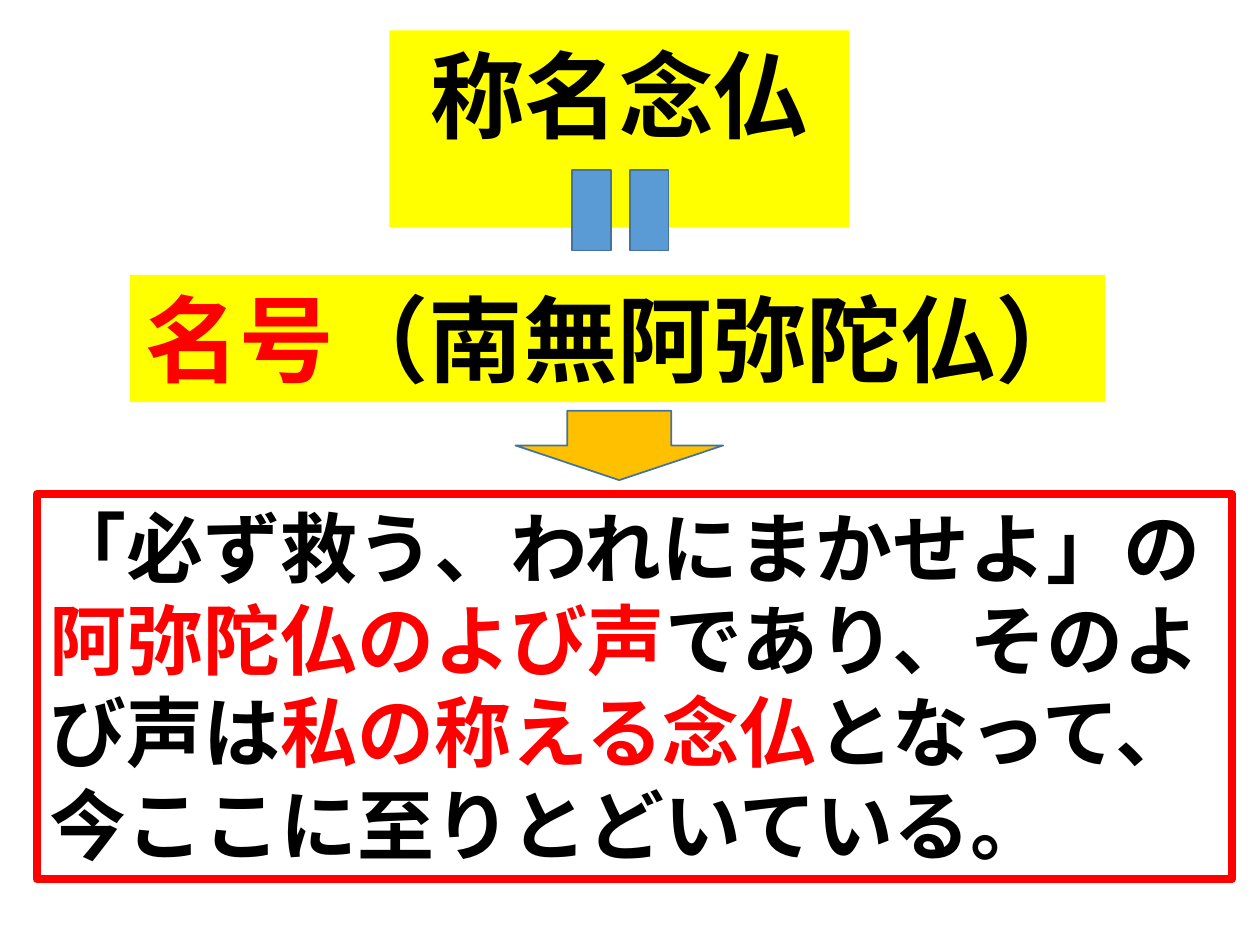
from pptx import Presentation
from pptx.dml.color import RGBColor
from pptx.enum import shapes, text
from pptx.util import Cm, Pt

BLACK, RED, YELLOW = "000000", "FF0000", "FFFF00"
ORANGE, BLUE, OUTLINE = "FFC000", "5B9BD5", "43739E"

# Boxes are left, top, width, height in centimetres; runs are (words, colour).
PRACTICE = {"box": (7.85, 0.61, 9.27, 2.57), "runs": [("称名念仏", BLACK)]}
NAME = {
    "box": (2.62, 5.54, 19.66, 2.57),
    "runs": [("名号", RED), ("（南無阿弥陀仏）", BLACK)],
}
MEANING = {
    "box": (0.74, 9.96, 24.1, 7.77),
    "runs": [
        ("「必ず救う、われにまかせよ」の", BLACK),
        ("阿弥陀仏のよび声", RED),
        ("であり、そのよび声は", BLACK),
        ("私の称える念仏", RED),
        ("となって、今ここに至りとどいている。", BLACK),
    ],
}
SYMBOLS = [
    (shapes.MSO_SHAPE.DOWN_ARROW, (10.39, 8.28, 4.19, 1.4), ORANGE, 0),
    (shapes.MSO_SHAPE.MATH_EQUAL, (11.4, 2.59, 2.21, 3.3), BLUE, 90),
]


def color(hex_string):
    return RGBColor.from_string(hex_string)


def set_fill(shape, hex_string):
    shape.fill.solid()
    shape.fill.fore_color.rgb = color(hex_string)


def set_line(shape, hex_string, width):
    shape.line.color.rgb = color(hex_string)
    shape.line.width = Pt(width)


def place(shape, box):
    shape.left, shape.top, shape.width, shape.height = map(Cm, box)


def write(shape, runs, size, alignment):
    frame = shape.text_frame
    frame.word_wrap = True
    frame.auto_size = text.MSO_AUTO_SIZE.SHAPE_TO_FIT_TEXT
    frame.vertical_anchor = text.MSO_ANCHOR.TOP
    paragraph = frame.paragraphs[0]
    paragraph.alignment = alignment
    for words, hex_string in runs:
        run = paragraph.add_run()
        run.text = words
        run.font.name = "Calibri"
        run.font.size = Pt(size)
        run.font.bold = True
        run.font.color.rgb = color(hex_string)


def main():
    presentation = Presentation()
    presentation.slide_width, presentation.slide_height = Cm(25.4), Cm(19.05)
    slide = presentation.slides.add_slide(presentation.slide_layouts[5])

    title = slide.shapes.title
    place(title, PRACTICE["box"])
    meaning = slide.shapes.add_textbox(*map(Cm, MEANING["box"]))
    name = slide.shapes.add_textbox(*map(Cm, NAME["box"]))

    for shape, content in ((title, PRACTICE), (name, NAME)):
        set_fill(shape, YELLOW)
        write(shape, content["runs"], 54, text.PP_ALIGN.CENTER)

    set_line(meaning, RED, 4.5)
    write(meaning, MEANING["runs"], 44, text.PP_ALIGN.LEFT)

    for kind, box, fill, rotation in SYMBOLS:
        symbol = slide.shapes.add_shape(kind, *map(Cm, box))
        symbol.rotation = rotation
        symbol.shadow.inherit = False
        set_fill(symbol, fill)
        set_line(symbol, OUTLINE, 1)

    presentation.save("out.pptx")


if __name__ == "__main__":
    main()
